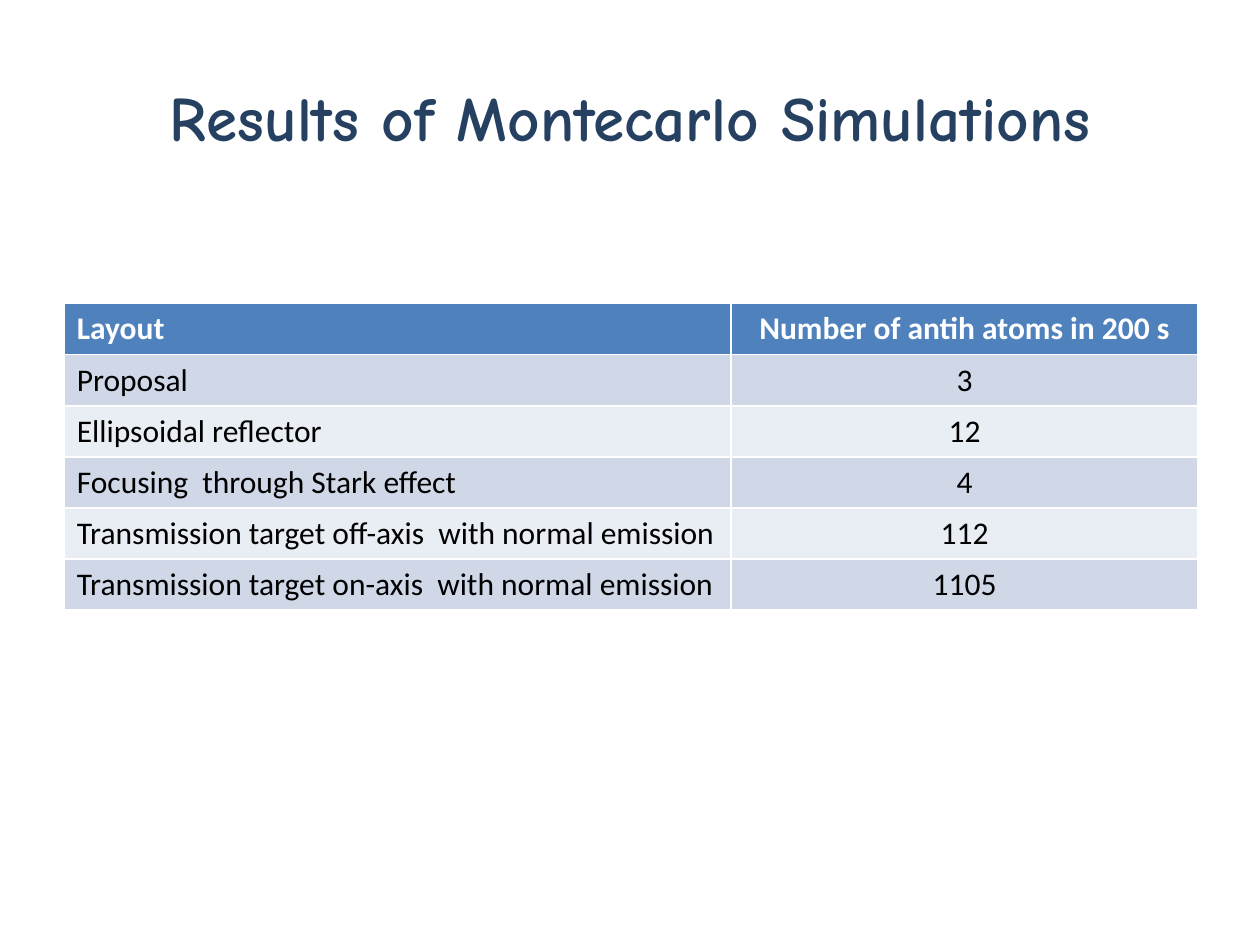
from pptx import Presentation
from pptx.dml.color import RGBColor
from pptx.enum.text import MSO_ANCHOR, PP_ALIGN
from pptx.util import Inches, Pt

HEADING = "Results of Montecarlo Simulations"
RESULTS = [
    ("Layout", "Number of antih atoms in 200 s"),
    ("Proposal", "3"),
    ("Ellipsoidal reflector", "12"),
    ("Focusing  through Stark effect", "4"),
    ("Transmission target off-axis  with normal emission", "112"),
    ("Transmission target on-axis  with normal emission", "1105"),
]
HEADER_FILL = "4F81BD"
BAND_FILLS = ("D0D8E8", "E9EDF4")
COLUMN_SHARES = (0.588, 0.412)
ALIGNMENTS = (PP_ALIGN.LEFT, PP_ALIGN.CENTER)


def color(hex_value):
    return RGBColor.from_string(hex_value)


def write(frame, text, font="Calibri", size=18, fill="000000", bold=False,
          align=PP_ALIGN.LEFT):
    paragraph = frame.paragraphs[0]
    paragraph.alignment = align
    run = paragraph.add_run()
    run.text = text
    run.font.name = font
    run.font.size = Pt(size)
    run.font.bold = bold
    run.font.color.rgb = color(fill)


def place_heading(slide, left, top, width, height):
    heading = slide.shapes.title
    heading.left, heading.top = left, top
    heading.width, heading.height = width, height
    heading.text_frame.vertical_anchor = MSO_ANCHOR.MIDDLE
    write(heading.text_frame, HEADING, font="Comic Neue", size=36,
          fill="254061", bold=True, align=PP_ALIGN.CENTER)


def place_results(slide, left, top, width, height):
    # The default table style supplies the white rules between cells
    results = slide.shapes.add_table(len(RESULTS), len(COLUMN_SHARES),
                                     left, top, width, height).table
    for column, share in zip(results.columns, COLUMN_SHARES):
        column.width = int(width * share)
    for r, entries in enumerate(RESULTS):
        is_header = r == 0
        row_fill = HEADER_FILL if is_header else BAND_FILLS[(r - 1) % 2]
        for c, entry in enumerate(entries):
            cell = results.cell(r, c)
            cell.fill.solid()
            cell.fill.fore_color.rgb = color(row_fill)
            write(cell.text_frame, entry, bold=is_header, align=ALIGNMENTS[c],
                  fill="FFFFFF" if is_header else "000000")


def main():
    deck = Presentation()
    deck.slide_width, deck.slide_height = Inches(10), Inches(7.5)
    width, height = deck.slide_width, deck.slide_height
    slide = deck.slides.add_slide(deck.slide_layouts[5])  # Title Only

    # Heading across the top, results below it
    place_heading(slide, int(width * 0.05), int(height * 0.04),
                  int(width * 0.9), Inches(1.25))
    place_results(slide, Inches(0.51), Inches(2.41),
                  int(width * 0.9), Inches(2.43))
    deck.save("out.pptx")


if __name__ == "__main__":
    main()
